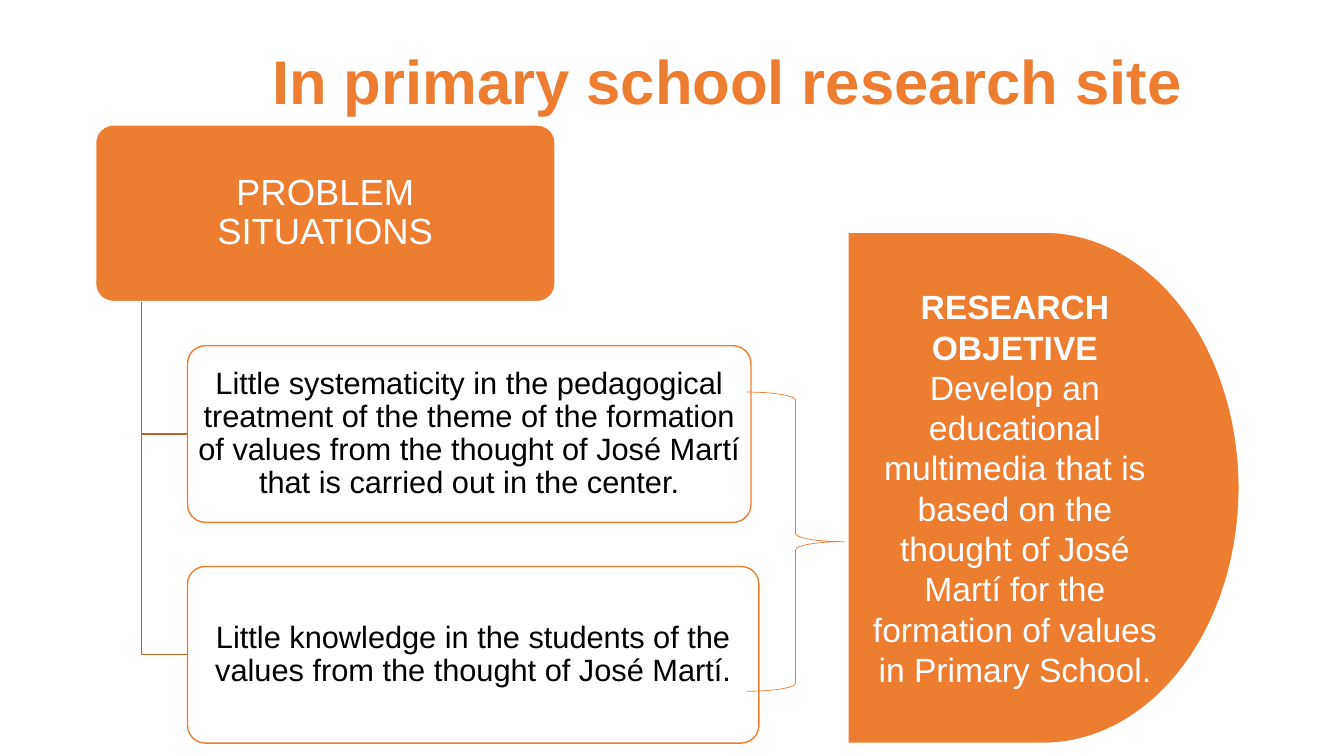
import pptx
import pptx.dml.color
import pptx.enum.shapes
import pptx.enum.text
import pptx.util
from lxml import etree

Cm = pptx.util.Cm
Pt = pptx.util.Pt
RGBColor = pptx.dml.color.RGBColor
SHAPES = pptx.enum.shapes.MSO_SHAPE

ORANGE = RGBColor(0xED, 0x7D, 0x31)
BROWN = RGBColor(0xBE, 0x64, 0x27)
WHITE = RGBColor(0xFF, 0xFF, 0xFF)
BLACK = RGBColor(0x00, 0x00, 0x00)

PROBLEMS = [
    ("Little systematicity in the pedagogical treatment of the theme of the formation "
     "of values from the thought of José Martí that is carried out in the center.", 14.2),
    ("Little knowledge in the students of the values from the thought of José Martí.", 14.4),
]


def write(frame, text, size, color, spacing=None, inset=None, bold_first=False):
    """Fill a text frame with centred paragraphs, one per line of text."""
    frame.text = text
    frame.word_wrap = True
    frame.vertical_anchor = pptx.enum.text.MSO_ANCHOR.MIDDLE
    if inset is not None:
        frame.margin_left = frame.margin_right = Cm(inset)
        frame.margin_top = frame.margin_bottom = Cm(inset)
    for index, paragraph in enumerate(frame.paragraphs):
        paragraph.alignment = pptx.enum.text.PP_ALIGN.CENTER
        if spacing:
            paragraph.line_spacing = spacing
        for run in paragraph.runs:
            run.font.name = "Arial"
            run.font.size = Pt(size)
            run.font.color.rgb = color
            run.font.bold = bold_first and index == 0


def add_outlined(slide, preset, box, fill, line, weight):
    """Add a preset shape without shadow; a fill of None leaves it empty."""
    shape = slide.shapes.add_shape(preset, *map(Cm, box))
    shape.shadow.inherit = False
    if fill is None:
        shape.fill.background()
    else:
        shape.fill.solid()
        shape.fill.fore_color.rgb = fill
    shape.line.color.rgb = line
    shape.line.width = Pt(weight)
    return shape


def add_branch(slide, stem, top, left, middle):
    """Draw the elbow from the root's underside to a problem's left side."""
    builder = slide.shapes.build_freeform(Cm(stem), Cm(top))
    builder.add_line_segments(
        [(Cm(stem), Cm(middle)), (Cm(left), Cm(middle))], close=False)
    branch = builder.convert_to_shape()
    branch.shadow.inherit = False
    branch.fill.background()
    branch.line.color.rgb = BROWN
    branch.line.width = Pt(1)


def add_title(slide, box):
    """Place the slide heading."""
    heading = slide.shapes.add_textbox(*map(Cm, box))
    write(heading.text_frame, "In primary school research site", 44, ORANGE, 0.9,
          bold_first=True)


def add_problem_tree(slide, left, top, width, height):
    """Place the root box with the problems hanging below it."""
    pitch = height * 1.25
    root = add_outlined(slide, SHAPES.ROUNDED_RECTANGLE,
                        (left, top, width, height), ORANGE, WHITE, 1)
    root.adjustments[0] = 0.1
    write(root.text_frame, "PROBLEM\nSITUATIONS", 26, WHITE, 0.9, 0.1)
    stem, problem_left = left + width * 0.1, left + width * 0.2
    for row, (statement, problem_width) in enumerate(PROBLEMS, start=1):
        problem_top = top + row * pitch
        add_branch(slide, stem, top + height, problem_left, problem_top + height / 2)
        problem = add_outlined(slide, SHAPES.ROUNDED_RECTANGLE,
                               (problem_left, problem_top, problem_width, height),
                               WHITE, ORANGE, 1)
        problem.adjustments[0] = 0.1
        write(problem.text_frame, statement, 22, BLACK, 0.9, 0.1)


def add_objective(slide, box):
    """Place the research objective panel."""
    objective = add_outlined(slide, SHAPES.FLOWCHART_DELAY, box, ORANGE, WHITE, 1.5)
    write(objective.text_frame,
          "RESEARCH OBJETIVE\nDevelop an educational multimedia that is based on the "
          "thought of José Martí for the formation of values in Primary School.",
          24, WHITE, bold_first=True)


def main():
    """Build the slide and save it."""
    deck = pptx.Presentation()
    deck.slide_width, deck.slide_height = Cm(33.87), Cm(19.05)
    slide = deck.slides.add_slide(deck.slide_layouts[6])
    add_title(slide, (4.65, 0.61, 27.38, 3.05))
    add_problem_tree(slide, 2.41, 3.15, 11.58, 4.45)
    add_outlined(slide, SHAPES.RIGHT_BRACE, (18.82, 9.88, 2.46, 7.54), None, ORANGE, 0.5)
    add_objective(slide, (21.36, 5.84, 9.88, 12.9))
    deck.save("out.pptx")


if __name__ == "__main__":
    main()
